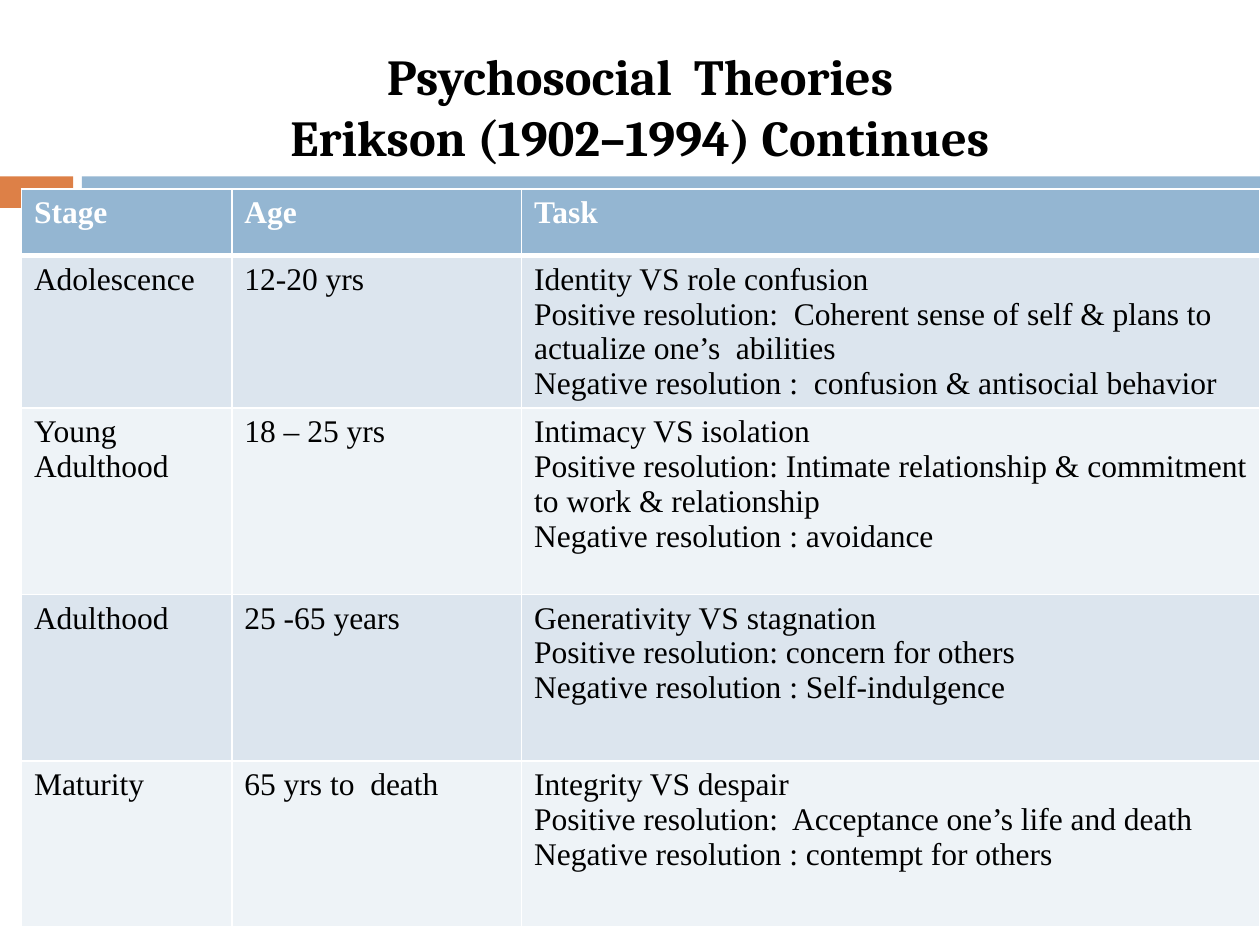
from pptx import Presentation
from pptx.dml.color import RGBColor
from pptx.enum.shapes import MSO_SHAPE
from pptx.enum.text import MSO_ANCHOR, MSO_AUTO_SIZE, PP_ALIGN
from pptx.oxml import parse_xml
from pptx.oxml.ns import nsdecls
from pptx.util import Inches, Pt

# Content
TITLE_LINES = ["Psychosocial  Theories", "Erikson (1902–1994) Continues"]
HEADERS = ["Stage", "Age", "Task"]
STAGES = [
    ("Adolescence", "12-20 yrs", [
        "Identity VS role confusion",
        "Positive resolution:  Coherent sense of self & plans to actualize one’s  abilities",
        "Negative resolution :  confusion & antisocial behavior"]),
    ("Young Adulthood", "18 – 25 yrs", [
        "Intimacy VS isolation",
        "Positive resolution: Intimate relationship & commitment to work & relationship",
        "Negative resolution : avoidance"]),
    ("Adulthood", "25 -65 years", [
        "Generativity VS stagnation",
        "Positive resolution: concern for others",
        "Negative resolution : Self-indulgence"]),
    ("Maturity", "65 yrs to  death", [
        "Integrity VS despair",
        "Positive resolution:  Acceptance one’s life and death",
        "Negative resolution : contempt for others"]),
]

THEME = {
    "title_font": "Cambria", "title_size": 28.8,
    "table_font": "Times New Roman", "table_size": 18,
    "black": "000000", "white": "FFFFFF",
    "orange": "DD8047", "blue": "94B6D2",
    "bands": ["DCE5EE", "EEF3F7"],
}

# Layout in inches
BAR_TOP, BAR_HEIGHT = 1.4, 0.25
BARS = [(0, 0.58, "orange"), (0.65, 9.35, "blue")]
TABLE_LEFT, TABLE_TOP = 0.17, 1.5
COLUMN_WIDTHS = [1.67, 2.3, 5.86]
ROW_HEIGHTS = [0.53, 1.21, 1.48, 1.32, 1.32]


def color(value):
    return RGBColor.from_string(value)


def add_run(paragraph, text, font, size, ink, bold):
    run = paragraph.add_run()
    run.text = text
    run.font.name = font
    run.font.size = Pt(size)
    run.font.bold = bold
    run.font.color.rgb = color(ink)


def set_borders(cell, bottom_width):
    properties = cell._tc.get_or_add_tcPr()
    widths = {"lnL": 1, "lnR": 1, "lnT": 1, "lnB": bottom_width}
    for index, (side, width) in enumerate(widths.items()):
        properties.insert(index, parse_xml(
            f'<a:{side} {nsdecls("a")} w="{Pt(width)}"><a:solidFill>'
            f'<a:srgbClr val="{THEME["white"]}"/></a:solidFill></a:{side}>'))


def fill_cell(cell, lines, background, ink, header):
    cell.fill.solid()
    cell.fill.fore_color.rgb = color(background)
    set_borders(cell, 3 if header else 1)
    frame = cell.text_frame
    for index, line in enumerate(lines):
        paragraph = frame.add_paragraph() if index else frame.paragraphs[0]
        paragraph.alignment = PP_ALIGN.LEFT
        add_run(paragraph, line, THEME["table_font"], THEME["table_size"], ink, header)


def add_bars(slide):
    for left, width, name in BARS:
        bar = slide.shapes.add_shape(
            MSO_SHAPE.RECTANGLE, Inches(left), Inches(BAR_TOP), Inches(width), Inches(BAR_HEIGHT))
        bar.shadow.inherit = False
        bar.fill.solid()
        bar.fill.fore_color.rgb = color(THEME[name])
        bar.line.fill.background()


def add_title(slide):
    title = slide.shapes.title
    title.left, title.top = Inches(0.33), Inches(0.25)
    title.width, title.height = Inches(9.5), Inches(1.08)
    frame = title.text_frame
    frame.word_wrap = True
    frame.auto_size = MSO_AUTO_SIZE.NONE
    frame.vertical_anchor = MSO_ANCHOR.MIDDLE
    frame.margin_top, frame.margin_bottom = Inches(0.1), 0
    paragraph = frame.paragraphs[0]
    paragraph.alignment = PP_ALIGN.CENTER
    for index, line in enumerate(TITLE_LINES):
        if index:
            paragraph.add_line_break()
        add_run(paragraph, line, THEME["title_font"], THEME["title_size"], THEME["black"], True)


def add_stage_table(slide):
    table = slide.shapes.add_table(
        len(ROW_HEIGHTS), len(COLUMN_WIDTHS), Inches(TABLE_LEFT), Inches(TABLE_TOP),
        Inches(sum(COLUMN_WIDTHS)), Inches(sum(ROW_HEIGHTS))).table
    for column, width in zip(table.columns, COLUMN_WIDTHS):
        column.width = Inches(width)
    for row, height in zip(table.rows, ROW_HEIGHTS):
        row.height = Inches(height)
    for cell, header in zip(table.rows[0].cells, HEADERS):
        fill_cell(cell, [header], THEME["blue"], THEME["white"], True)
    for index, (stage, age, tasks) in enumerate(STAGES):
        band = THEME["bands"][index % 2]
        for cell, lines in zip(table.rows[index + 1].cells, ([stage], [age], tasks)):
            fill_cell(cell, lines, band, THEME["black"], False)


def main():
    presentation = Presentation()
    presentation.slide_width, presentation.slide_height = Inches(10), Inches(7.5)
    slide = presentation.slides.add_slide(presentation.slide_layouts[5])
    add_bars(slide)
    add_title(slide)
    add_stage_table(slide)
    presentation.save("out.pptx")


if __name__ == "__main__":
    main()
